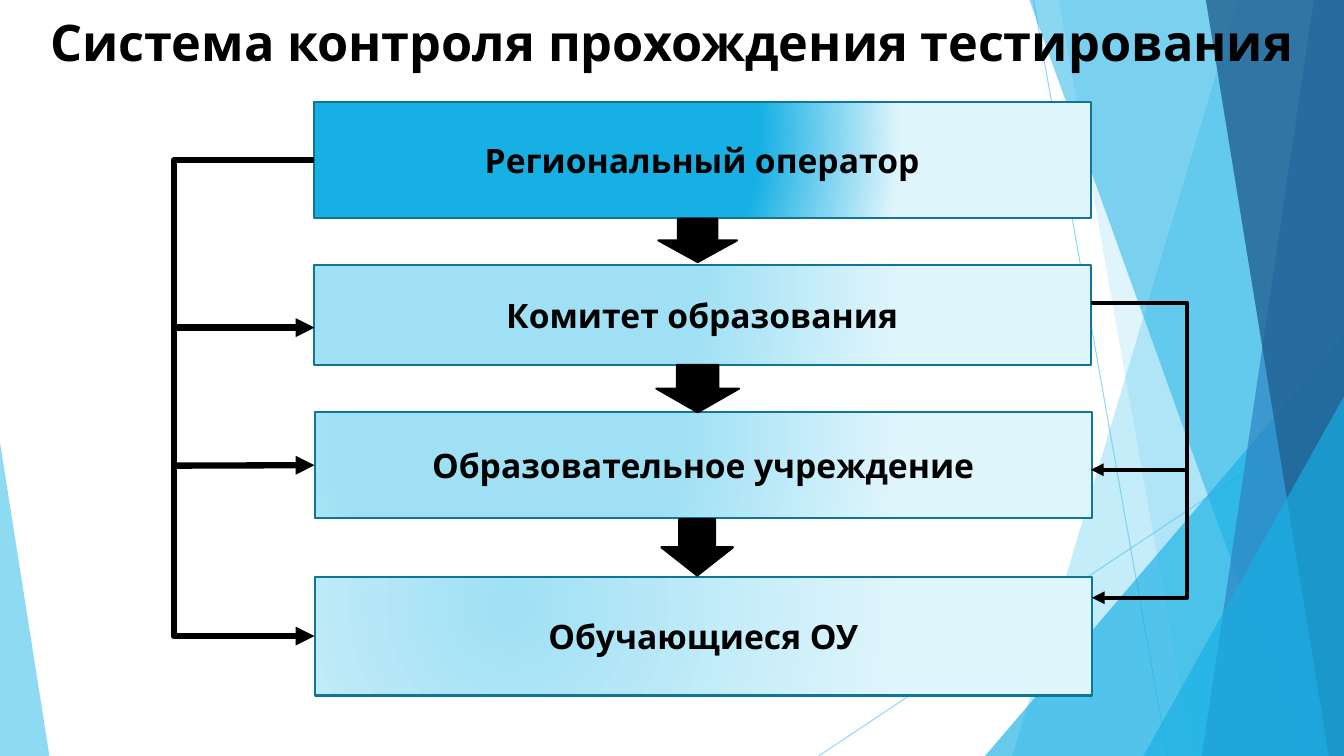
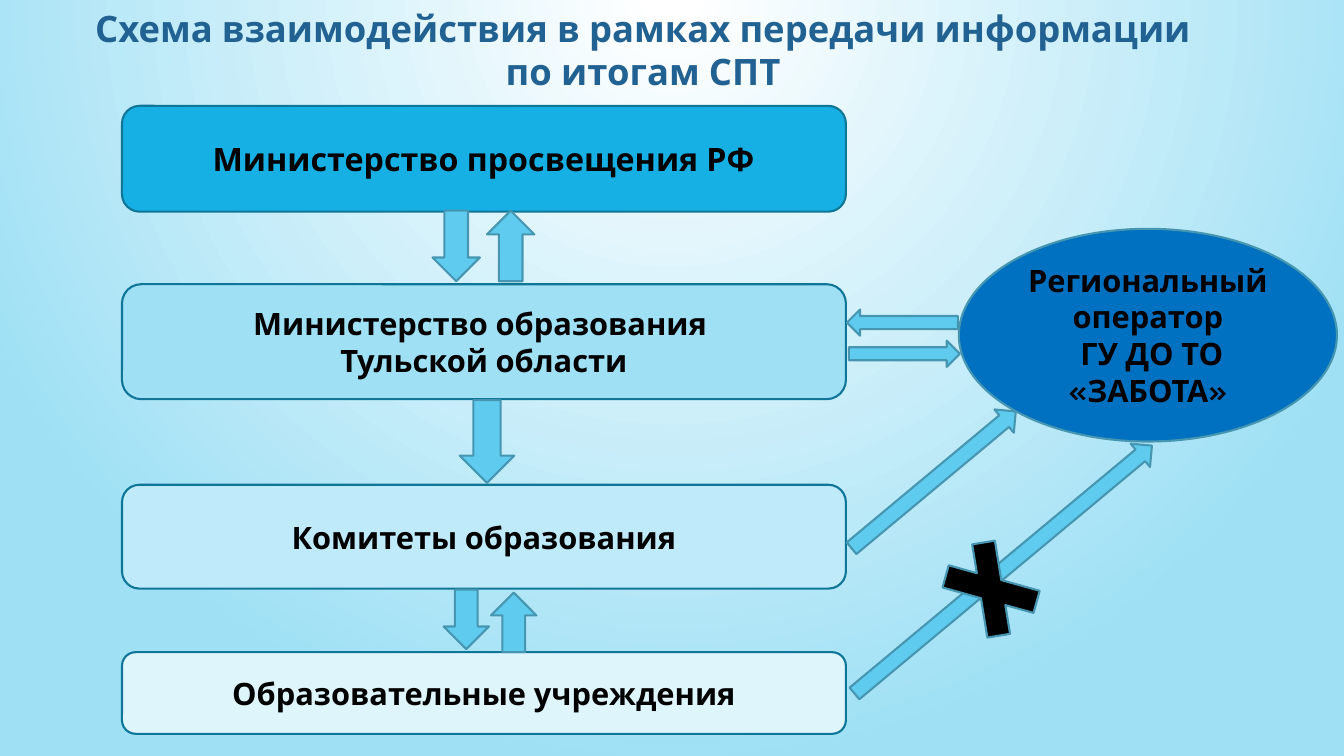
from lxml.etree import SubElement
from pptx import Presentation
from pptx.dml.color import RGBColor
from pptx.enum.shapes import MSO_CONNECTOR, MSO_SHAPE
from pptx.enum.text import MSO_ANCHOR, PP_ALIGN
from pptx.oxml.ns import qn
from pptx.util import Inches, Pt

FONT = "Karla"
BLACK = RGBColor(0x00, 0x00, 0x00)
WHITE = RGBColor(0xFF, 0xFF, 0xFF)
SKY = RGBColor(0x5F, 0xCB, 0xEF)
AZURE = RGBColor(0x17, 0xB0, 0xE4)
BLUE = RGBColor(0x2E, 0x83, 0xC3)
NAVY = RGBColor(0x22, 0x62, 0x92)
ROYAL = RGBColor(0x00, 0x70, 0xC0)
PALE = RGBColor(0x9F, 0xE0, 0xF5)
PALER = RGBColor(0xBF, 0xEA, 0xF9)
PALEST = RGBColor(0xDF, 0xF5, 0xFC)
BOX_EDGE = RGBColor(0x0F, 0x76, 0x98)
ARROW_EDGE = RGBColor(0x46, 0x96, 0xB1)
WIDTH, HEIGHT = 13.33, 7.5


def add_block(slide, text="", *, at, kind=None, fill=None, edge=None, size=24,
              color=BLACK, anchor=MSO_ANCHOR.MIDDLE, turn=0):
    place = [Inches(value) for value in at]
    if kind is None:
        block = slide.shapes.add_textbox(*place)
    else:
        block = slide.shapes.add_shape(kind, *place)
        block.shadow.inherit = False
        block.line.color.rgb = edge
        block.line.width = Pt(1.5)
    if fill is not None:
        block.fill.solid()
        block.fill.fore_color.rgb = fill
    block.rotation = turn
    if text:
        frame = block.text_frame
        frame.word_wrap = True
        frame.vertical_anchor = anchor
        for index, line in enumerate(text.split("\n")):
            paragraph = frame.add_paragraph() if index else frame.paragraphs[0]
            paragraph.alignment = PP_ALIGN.CENTER
            run = paragraph.add_run()
            run.text = line
            run.font.name = FONT
            run.font.size = Pt(size)
            run.font.bold = True
            run.font.color.rgb = color
    return block


def apply_radial_fill(owner, fill, stops, focus):
    fill.gradient()
    gradient = owner.element.find(".//" + qn("a:gradFill"))
    for child in list(gradient):
        gradient.remove(child)
    stop_list = SubElement(gradient, qn("a:gsLst"))
    for position, color in stops:
        stop = SubElement(stop_list, qn("a:gs"), pos=str(position * 1000))
        SubElement(stop, qn("a:srgbClr"), val=str(color))
    radial = SubElement(gradient, qn("a:path"), path="circle")
    SubElement(radial, qn("a:fillToRect"),
               {side: str(value * 1000) for side, value in zip("ltrb", focus)})


prs = Presentation()
prs.slide_width = Inches(WIDTH)
prs.slide_height = Inches(HEIGHT)
blank = prs.slide_layouts[6]

control = prs.slides.add_slide(blank)
connectors = []
translucent = []

for x1, y1, x2, y2 in [(10.25, 0, 11.58, HEIGHT), (WIDTH, 4.03, 8.12, HEIGHT)]:
    ray = control.shapes.add_connector(
        MSO_CONNECTOR.STRAIGHT, Inches(x1), Inches(y1), Inches(x2), Inches(y2))
    ray.line.color.rgb = SKY
    ray.line.width = Pt(0.75)
    connectors.append(ray)
    translucent.append((ray, 70))

facets = [
    ("slice", (12.28, 10.04), SKY, 36),
    ("slice", (10.5, 11.83), SKY, 20),
    ("right", (9.77, 3.33, 3.56, 4.17), AZURE, 66),
    ("slice", (10.21, 12.91), AZURE, 50),
    ("slice", (13.03, 11.92), BLUE, 70),
    ("slice", (11.96, 13.18), NAVY, 80),
    ("right", (11.34, 3.93, 1.99, 3.57), AZURE, 66),
    ("left", (0, 4.39, 0.49, 3.11), SKY, 70),
]
for form, place, color, opacity in facets:
    if form == "slice":
        top_x, bottom_x = place
        outline = control.shapes.build_freeform(Inches(top_x), 0)
        outline.add_line_segments([
            (Inches(x), Inches(y))
            for x, y in [(WIDTH, 0), (WIDTH, HEIGHT), (bottom_x, HEIGHT)]])
        facet = outline.convert_to_shape()
    else:
        facet = control.shapes.add_shape(
            MSO_SHAPE.ISOSCELES_TRIANGLE, *[Inches(value) for value in place])
        facet.adjustments[0] = 1 if form == "right" else 0
    facet.shadow.inherit = False
    facet.fill.solid()
    facet.fill.fore_color.rgb = color
    facet.line.fill.background()
    translucent.append((facet, opacity))

for part, opacity in translucent:
    tint = part.element.spPr.find(".//" + qn("a:srgbClr"))
    SubElement(tint, qn("a:alpha"), val=str(opacity * 1000))

add_block(control, "Система контроля прохождения тестирования",
          at=(0, 0.06, WIDTH, 0.78), size=36, anchor=MSO_ANCHOR.TOP)

levels = []
for name, left, top, height, start, color in [
    ("Региональный оператор", 3.11, 1.01, 1.15, 64, AZURE),
    ("Комитет образования", 3.11, 2.63, 0.99, 48, PALE),
    ("Образовательное учреждение", 3.12, 4.09, 1.05, 43, PALE),
    ("Обучающиеся ОУ", 3.12, 5.72, 1.18, 0, PALE),
]:
    level = add_block(control, name, at=(left, top, 7.71, height),
                      kind=MSO_SHAPE.RECTANGLE, edge=BOX_EDGE)
    apply_radial_fill(level, level.fill, [(start, color), (100, PALEST)],
                      (50, 50, 100, 100))
    levels.append(level)

links = [
    (3.11, 1.59, 3.12, 6.31, 1.7, 4.5, None),
    (1.72, 3.25, 3.12, 3.25, None, 4.5, None),
    (1.71, 4.62, 3.12, 4.62, None, 4.5, levels[2]),
    (10.82, 3.01, 10.83, 5.93, 11.79, 3, None),
    (11.77, 4.66, 10.82, 4.66, None, 3, None),
]
for x1, y1, x2, y2, bend_x, weight, target in links:
    route = MSO_CONNECTOR.ELBOW if bend_x else MSO_CONNECTOR.STRAIGHT
    link = control.shapes.add_connector(
        route, Inches(x1), Inches(y1), Inches(x2), Inches(y2))
    if bend_x:
        bend = round((bend_x - x1) / (x2 - x1) * 100000)
        geometry = link.element.spPr.find(qn("a:prstGeom"))
        SubElement(geometry.find(qn("a:avLst")), qn("a:gd"),
                   name="adj1", fmla=f"val {bend}")
    if target:
        link.end_connect(target, 1)
    link.line.color.rgb = BLACK
    link.line.width = Pt(weight)
    SubElement(link.element.spPr.find(qn("a:ln")), qn("a:tailEnd"), type="triangle")
    connectors.append(link)

for connector in connectors:
    SubElement(connector.element.spPr, qn("a:effectLst"))

for place in [(6.53, 2.17, 0.78, 0.43), (6.51, 3.62, 0.82, 0.47),
              (6.56, 5.15, 0.71, 0.56)]:
    add_block(control, at=place, kind=MSO_SHAPE.DOWN_ARROW, fill=BLACK, edge=BLACK)

exchange = prs.slides.add_slide(blank)
apply_radial_fill(exchange, exchange.background.fill,
                  [(0, WHITE), (2, WHITE), (100, PALE)], (50, -80, 50, 180))

for name, top, height, color, size in [
    ("Министерство просвещения РФ", 1.05, 1.05, AZURE, 23),
    ("Министерство образования \nТульской области", 2.82, 1.14, PALE, 22),
    ("Комитеты образования", 4.81, 1.03, PALER, 22),
    ("Образовательные учреждения", 6.47, 0.81, PALEST, 22),
]:
    add_block(exchange, name, at=(1.21, top, 7.18, height), size=size,
              kind=MSO_SHAPE.ROUNDED_RECTANGLE, fill=color, edge=BOX_EDGE)

add_block(exchange, "Региональный оператор\n ГУ ДО ТО «ЗАБОТА»",
          at=(9.51, 2.27, 3.75, 2.11), size=22,
          kind=MSO_SHAPE.OVAL, fill=ROYAL, edge=ARROW_EDGE)

for kind, place, turn in [
    (MSO_SHAPE.DOWN_ARROW, (4.56, 3.97, 0.54, 0.82), 0),
    (MSO_SHAPE.DOWN_ARROW, (4.29, 2.09, 0.47, 0.7), 0),
    (MSO_SHAPE.DOWN_ARROW, (4.83, 2.09, 0.47, 0.7), 180),
    (MSO_SHAPE.DOWN_ARROW, (4.4, 5.85, 0.45, 0.59), 0),
    (MSO_SHAPE.DOWN_ARROW, (4.87, 5.88, 0.45, 0.59), 180),
    (MSO_SHAPE.DOWN_ARROW, (9.11, 3.7, 0.3, 2.12), 230.2),
    (MSO_SHAPE.RIGHT_ARROW, (8.42, 3.38, 1.1, 0.26), 0),
    (MSO_SHAPE.RIGHT_ARROW, (8.4, 3.07, 1.1, 0.26), 180),
    (MSO_SHAPE.DOWN_ARROW, (9.8, 3.73, 0.3, 3.84), 230.2),
]:
    add_block(exchange, at=place, kind=kind, fill=SKY, edge=ARROW_EDGE, turn=turn)

add_block(exchange,
          "Схема взаимодействия в рамках передачи информации \nпо итогам СПТ ",
          at=(0.3, 0.01, 12.25, 0.98), size=26, color=NAVY, anchor=MSO_ANCHOR.TOP)
add_block(exchange, at=(9.07, 5.36, 1.52, 0.97), kind=MSO_SHAPE.MATH_MULTIPLY,
          fill=BLACK, edge=ARROW_EDGE, turn=48.2)

prs.save("out.pptx")
